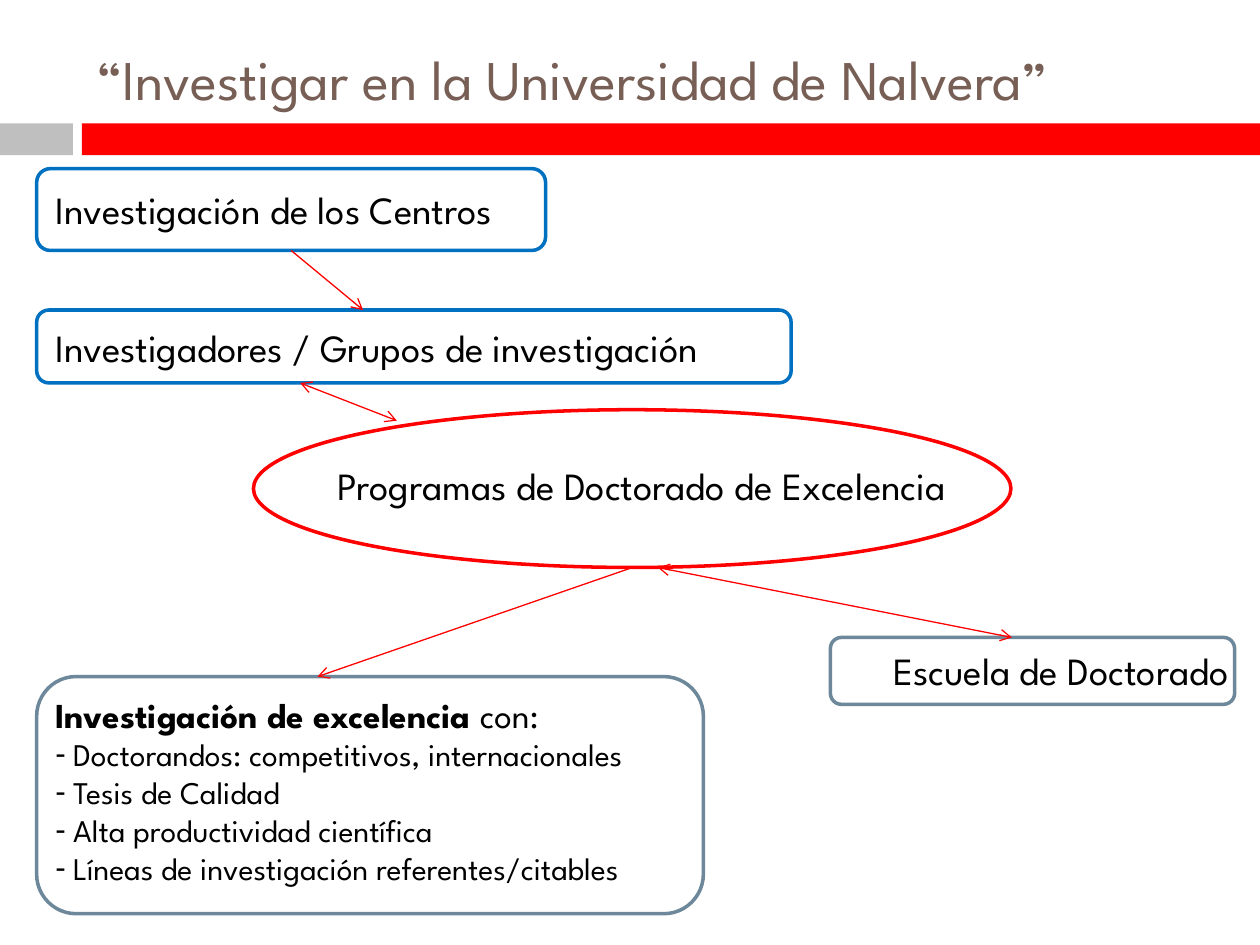
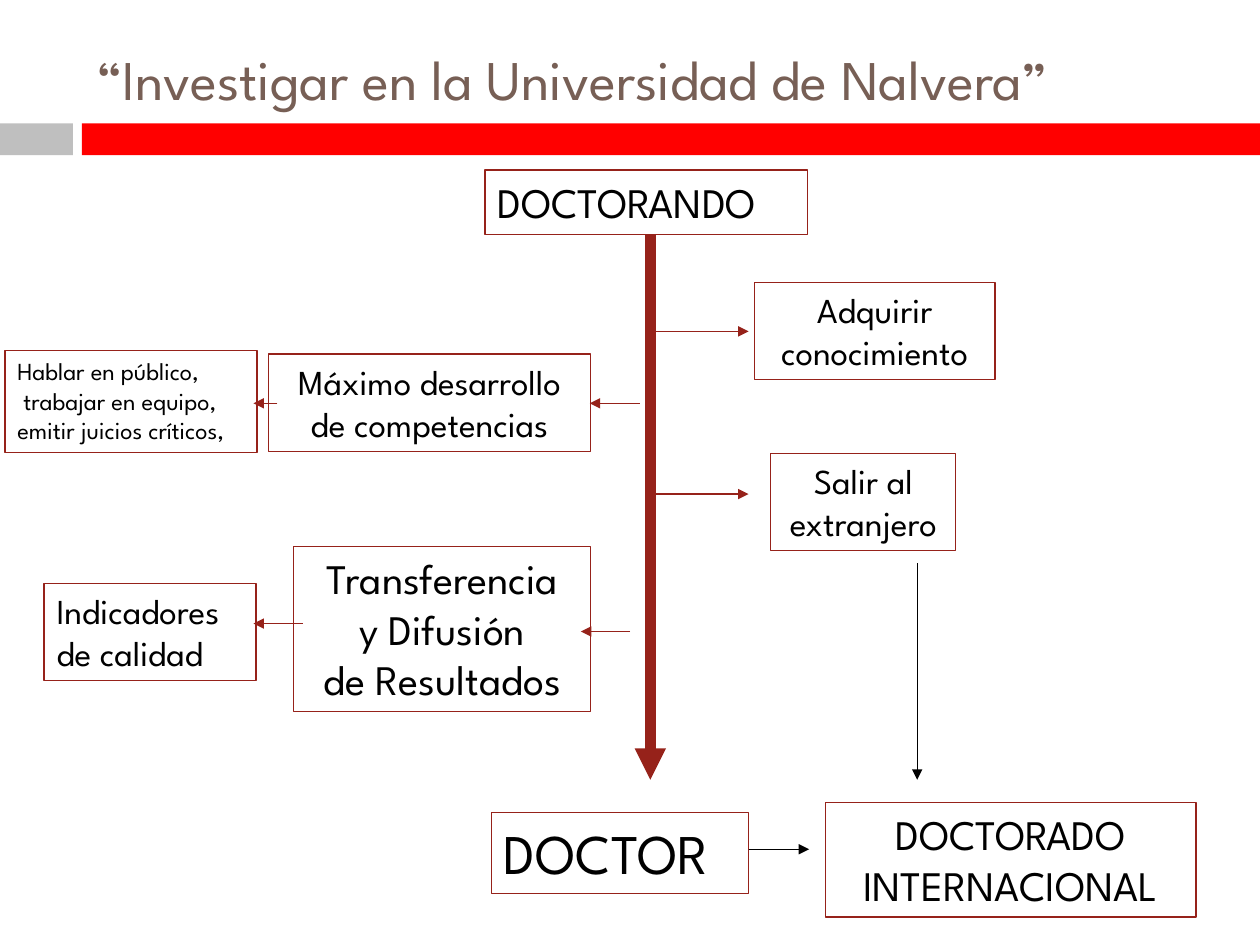
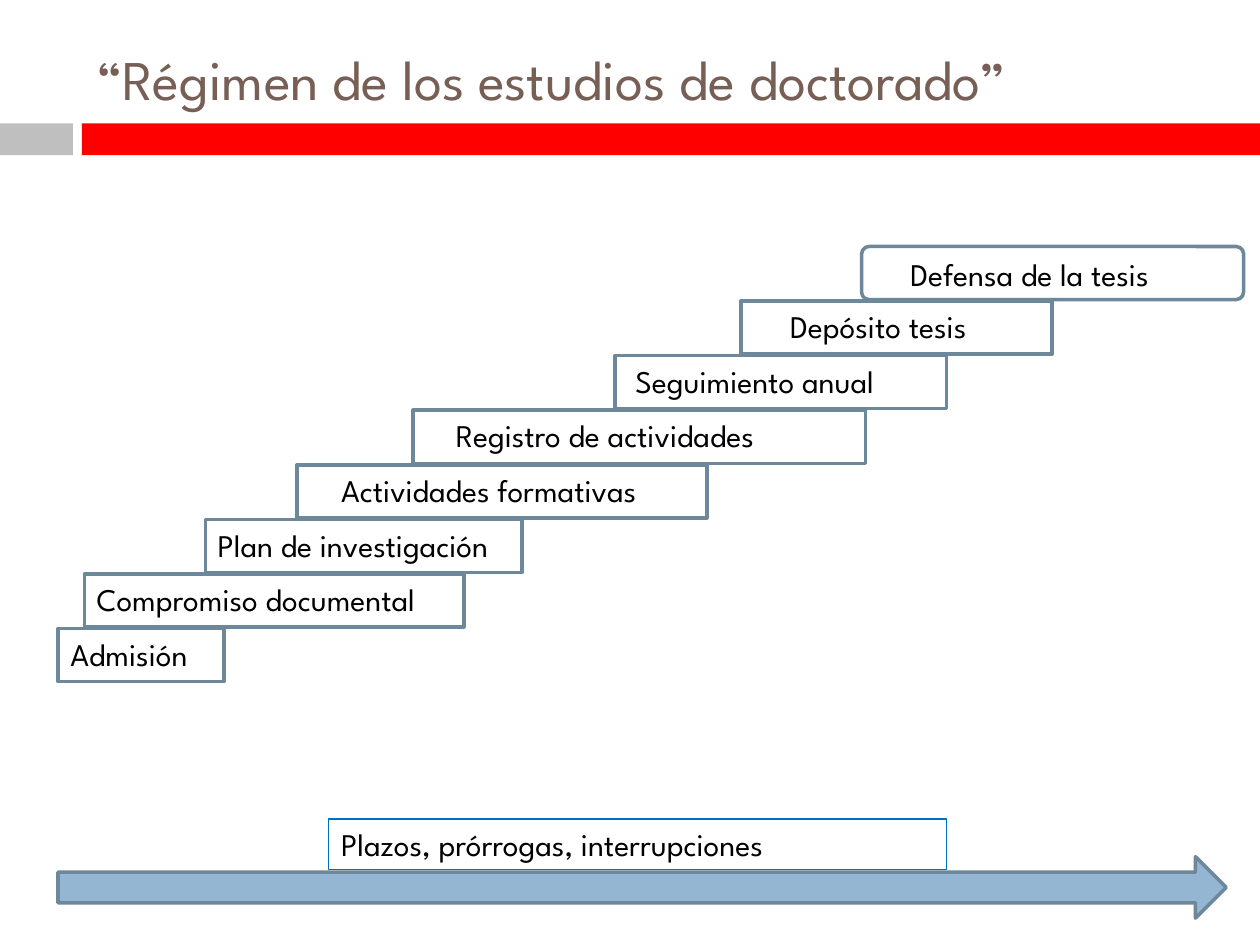
from dataclasses import dataclass

from lxml.etree import SubElement
from pptx import Presentation
from pptx.dml.color import RGBColor
from pptx.enum.shapes import MSO_CONNECTOR, MSO_SHAPE
from pptx.enum.text import MSO_ANCHOR, MSO_AUTO_SIZE, PP_ALIGN
from pptx.oxml.ns import qn
from pptx.util import Cm, Pt


@dataclass(frozen=True)
class Theme:
    """Colours and type sizes shared by all slides."""

    font: str = "League Spartan"
    black: RGBColor = RGBColor(0, 0, 0)
    brown: RGBColor = RGBColor(0x77, 0x5F, 0x55)
    grey: RGBColor = RGBColor(0xBF, 0xBF, 0xBF)
    red: RGBColor = RGBColor(0xFF, 0, 0)
    dark_red: RGBColor = RGBColor(0x96, 0x22, 0x1A)
    blue: RGBColor = RGBColor(0, 0x70, 0xC0)
    slate: RGBColor = RGBColor(0x6D, 0x87, 0x9B)
    pale_blue: RGBColor = RGBColor(0x94, 0xB6, 0xD2)
    title: int = 32
    large: int = 24
    topic: int = 22
    medium: int = 20
    text: int = 18
    small: int = 14
    thin: float = 0.75
    outline: float = 2
    trunk: float = 6


THEME = Theme()
LEFT, CENTER, RIGHT = PP_ALIGN.LEFT, PP_ALIGN.CENTER, PP_ALIGN.RIGHT


def place(shape, left, top, width, height):
    """Move and size a shape in centimetres."""
    shape.left, shape.top = Cm(left), Cm(top)
    shape.width, shape.height = Cm(width), Cm(height)


def format_paragraph(paragraph, size, color=THEME.black, alignment=LEFT, space_before=0):
    """Set the font, alignment and spacing of a paragraph."""
    paragraph.alignment = alignment
    paragraph.space_before = Pt(space_before)
    paragraph.font.name = THEME.font
    paragraph.font.size = Pt(size)
    paragraph.font.color.rgb = color


def set_bullet(paragraph, character=None, indent=0.0):
    """Give a paragraph a hanging bullet, or none."""
    properties = paragraph._p.get_or_add_pPr()
    properties.set("marL", str(Cm(indent)))
    properties.set("indent", str(-Cm(indent)))
    if character:
        SubElement(properties, qn("a:buChar")).set("char", character)
    else:
        SubElement(properties, qn("a:buNone"))


def add_box(slide, kind, bounds, line=None, weight=THEME.thin, fill=None):
    """Add a preset shape without a shadow."""
    shape = slide.shapes.add_shape(kind, *map(Cm, bounds))
    shape.shadow.inherit = False
    if fill is None:
        shape.fill.background()
    else:
        shape.fill.solid()
        shape.fill.fore_color.rgb = fill
    if line is None:
        shape.line.fill.background()
    else:
        shape.line.color.rgb = line
        shape.line.width = Pt(weight)
    return shape


def write_lines(shape, lines, size, alignment=LEFT, inset=0.25):
    """Write one paragraph per line inside a shape."""
    frame = shape.text_frame
    frame.word_wrap = True
    frame.vertical_anchor = MSO_ANCHOR.TOP
    frame.margin_left = Cm(inset)
    frame.text = "\n".join(lines)
    for paragraph in frame.paragraphs:
        format_paragraph(paragraph, size, alignment=alignment)


def add_arrow(slide, start, end, color, weight=THEME.thin, head="triangle", double=False):
    """Add a straight arrow from start to end."""
    connector = slide.shapes.add_connector(
        MSO_CONNECTOR.STRAIGHT, *map(Cm, (*start, *end))
    )
    connector.line.color.rgb = color
    connector.line.width = Pt(weight)
    properties = connector.element.spPr
    line = properties.find(qn("a:ln"))
    if double:
        SubElement(line, qn("a:headEnd")).set("type", head)
    SubElement(line, qn("a:tailEnd")).set("type", head)
    SubElement(properties, qn("a:effectLst"))


def add_slide(presentation, layout_name, title):
    """Add a slide with its formatted title."""
    layout = presentation.slide_layouts.get_by_name(layout_name)
    slide = presentation.slides.add_slide(layout)
    shape = slide.shapes.title
    place(shape, 1.7, 0.2, 22.66, 2.74)
    shape.text_frame.text = title
    shape.text_frame.vertical_anchor = MSO_ANCHOR.MIDDLE
    shape.text_frame.auto_size = MSO_AUTO_SIZE.NONE
    format_paragraph(shape.text_frame.paragraphs[0], THEME.title, THEME.brown)
    return slide


def add_master_bands(presentation, slide):
    """Put the grey and red bands on the slide master."""
    bands = [(0, 1.47, THEME.grey), (1.65, 23.75, THEME.red)]
    for number, (left, width, color) in enumerate(bands, start=20):
        band = add_box(slide, MSO_SHAPE.RECTANGLE, (left, 2.49, width, 0.64), fill=color)
        band.element.nvSpPr.cNvPr.id = number
        presentation.slide_master.shapes.element.append(band.element)


def fill_research_body(body):
    """Write the research topics and the list of qualities."""
    place(body, 0.86, 3.63, 24.16, 14.96)
    frame = body.text_frame
    frame.auto_size = MSO_AUTO_SIZE.NONE
    topics = [
        ("Investigación de los Centros", LEFT, 0),
        ("Investigadores / Grupos de investigación", LEFT, 52.5),
        ("Programas de Doctorado de Excelencia", CENTER, 52.5),
        ("Escuela de Doctorado", RIGHT, 79),
    ]
    qualities = [
        "Doctorandos: competitivos, internacionales",
        "Tesis de Calidad",
        "Alta productividad científica",
        "Líneas de investigación referentes/citables",
    ]
    frame.text = "\n".join(text for text, _, _ in topics)
    for paragraph, (_, alignment, gap) in zip(frame.paragraphs, topics):
        set_bullet(paragraph)
        format_paragraph(paragraph, THEME.topic, alignment=alignment, space_before=gap)
    heading = frame.add_paragraph()
    set_bullet(heading)
    format_paragraph(heading, THEME.medium)
    for text, bold in [("Investigación de excelencia ", True), ("con:", False)]:
        run = heading.add_run()
        run.text = text
        run.font.bold = bold
    for quality in qualities:
        paragraph = frame.add_paragraph()
        paragraph.text = quality
        set_bullet(paragraph, "-", 0.36)
        format_paragraph(paragraph, THEME.text)


def build_research(slide):
    """Draw the map from research centres to excellence."""
    fill_research_body(slide.placeholders[1])
    rounded = MSO_SHAPE.ROUNDED_RECTANGLE
    outlines = [
        (rounded, (0.74, 3.4, 10.26, 1.65), THEME.blue),
        (rounded, (0.74, 6.25, 15.21, 1.47), THEME.blue),
        (MSO_SHAPE.OVAL, (5.11, 8.26, 15.27, 3.18), THEME.red),
        (rounded, (16.74, 12.85, 8.15, 1.35), THEME.slate),
        (rounded, (0.74, 13.64, 13.44, 4.78), THEME.slate),
    ]
    for kind, bounds, color in outlines:
        add_box(slide, kind, bounds, color, THEME.outline)
    arrows = [
        ((5.87, 5.05), (7.32, 6.25), False),
        ((6.05, 7.72), (8, 8.48), True),
        ((13.26, 11.44), (20.4, 12.85), True),
        ((12.75, 11.44), (6.4, 13.64), False),
    ]
    for start, end, double in arrows:
        add_arrow(slide, start, end, THEME.red, head="arrow", double=double)


def build_doctoral_path(slide):
    """Draw the path from doctoral student to doctor."""
    boxes = [
        (["DOCTORANDO"], (9.78, 3.43, 6.5, 1.3), THEME.large, LEFT),
        (["Adquirir", "conocimiento"], (15.21, 5.69, 4.85, 1.96), THEME.medium, CENTER),
        (["Máximo desarrollo", "de competencias"], (5.41, 7.14, 6.5, 1.96), THEME.medium, CENTER),
        (["Hablar en público,", " trabajar en equipo,", "emitir juicios críticos,"],
         (0.1, 7.06, 5.08, 2.06), THEME.small, LEFT),
        (["Salir al", "extranjero"], (15.54, 9.14, 3.73, 1.96), THEME.medium, CENTER),
        (["Transferencia", "y Difusión", "de Resultados"],
         (5.92, 11.02, 5.99, 3.33), THEME.large, CENTER),
        (["Indicadores", "de calidad"], (0.89, 11.76, 4.27, 1.96), THEME.medium, LEFT),
        (["DOCTOR"], (9.91, 16.38, 5.18, 1.63), THEME.title, LEFT),
        (["DOCTORADO", "INTERNACIONAL"], (16.64, 16.18, 7.47, 2.31), THEME.large, CENTER),
    ]
    for lines, bounds, size, alignment in boxes:
        box = add_box(slide, MSO_SHAPE.RECTANGLE, bounds, THEME.dark_red)
        write_lines(box, lines, size, alignment)
    trunk = 13.11
    add_arrow(slide, (trunk, 4.72), (trunk, 15.72), THEME.dark_red, THEME.trunk)
    branches = [
        (trunk, 15.09, 6.68),
        (trunk, 15.09, 9.96),
        (12.9, 11.89, 8.13),
        (5.59, 5.11, 8.13),
        (12.7, 11.71, 12.73),
        (6.1, 5.11, 12.57),
    ]
    for start, end, height in branches:
        add_arrow(slide, (start, height), (end, height), THEME.dark_red)
    add_arrow(slide, (18.49, 11.35), (18.49, 15.72), THEME.black)
    add_arrow(slide, (15.09, 17.12), (16.31, 17.12), THEME.black)


def build_study_stages(slide):
    """Draw the staircase of stages above the timeline."""
    stages = [
        ("Defensa de la tesis", 17.37, 7.7, 0.94, 0.14),
        ("Depósito tesis", 14.94, 6.27, 0.99, 0),
        ("Seguimiento anual", 12.4, 6.68, 0.41, 0),
        ("Registro de actividades", 8.33, 9.12, 0.86, 0),
        ("Actividades formativas", 5.99, 8.26, 0.89, 0),
        ("Plan de investigación", 4.14, 6.38, 0.25, 0),
        ("Compromiso documental", 1.7, 7.65, 0.25, 0),
        ("Admisión", 1.17, 3.35, 0.25, 0),
    ]
    first_top, step = 4.97, 1.1
    for index, (text, left, width, inset, corner) in enumerate(stages):
        bounds = (left, first_top + index * step, width, 1.07)
        stage = add_box(
            slide, MSO_SHAPE.ROUNDED_RECTANGLE, bounds, THEME.slate, THEME.outline
        )
        stage.adjustments[0] = corner
        write_lines(stage, [text], THEME.text, inset=inset)
    add_box(
        slide, MSO_SHAPE.RIGHT_ARROW, (1.17, 17.27, 23.55, 1.24),
        THEME.slate, THEME.outline, THEME.pale_blue,
    )
    deadlines = add_box(slide, MSO_SHAPE.RECTANGLE, (6.63, 16.51, 12.45, 1.02), THEME.blue)
    write_lines(deadlines, ["Plazos, prórrogas, interrupciones"], THEME.text)


def main():
    """Build and save the presentation."""
    presentation = Presentation()
    presentation.slide_width, presentation.slide_height = Cm(25.4), Cm(19.05)
    research_title = "“Investigar en la Universidad de Nalvera”"
    research = add_slide(presentation, "Title and Content", research_title)
    add_master_bands(presentation, research)
    build_research(research)
    build_doctoral_path(add_slide(presentation, "Title Only", research_title))
    build_study_stages(
        add_slide(presentation, "Title Only", "“Régimen de los estudios de doctorado”")
    )
    presentation.save("out.pptx")


if __name__ == "__main__":
    main()
